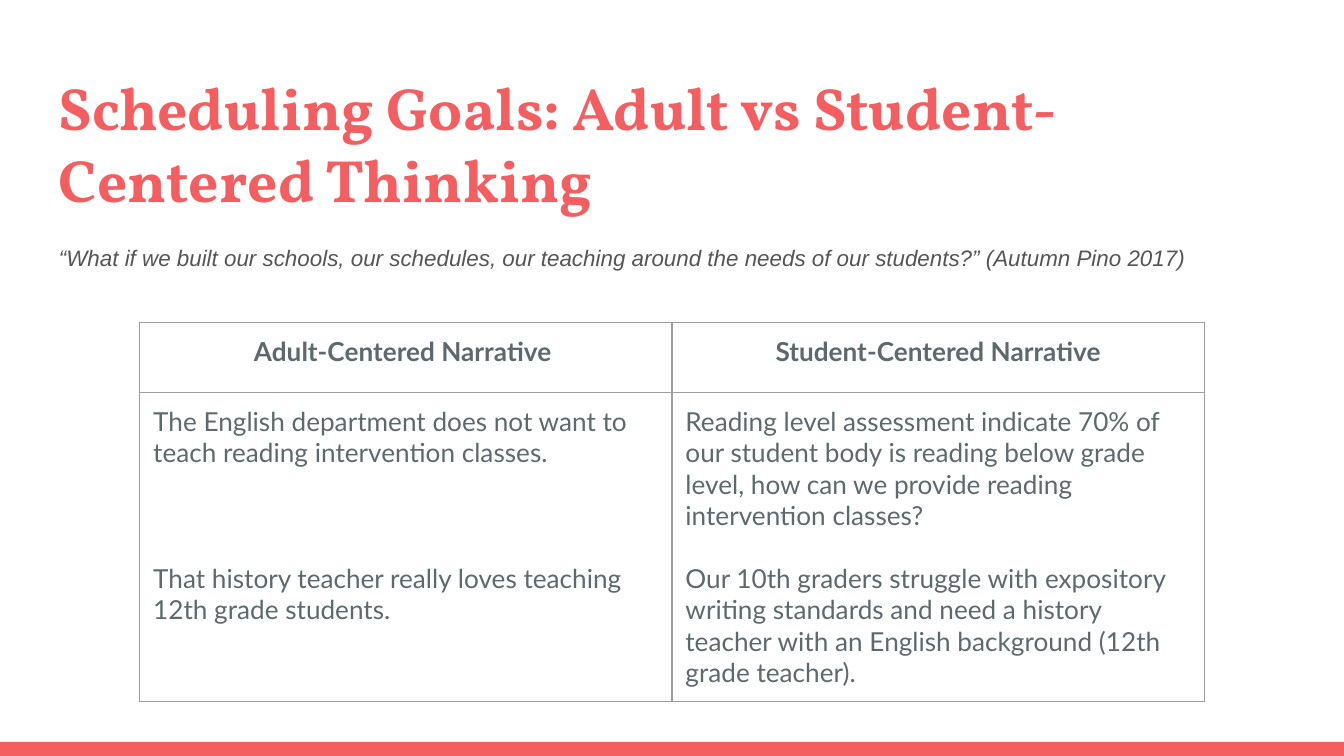
from dataclasses import dataclass

from lxml import etree
from pptx import Presentation
from pptx.dml.color import RGBColor
from pptx.enum import shapes, text
from pptx.oxml.ns import qn
from pptx.util import Inches, Pt

HEADERS = ["Adult-Centered Narrative ", "Student-Centered Narrative"]
# Each column: space in points before its second paragraph, then its paragraphs
NARRATIVES = [
    (50.4, ["The English department does not want to teach reading intervention classes.",
            "That history teacher really loves teaching 12th grade students."]),
    (16.8, ["Reading level assessment indicate 70% of our student body is reading "
            "below grade level, how can we provide reading intervention classes?",
            "Our 10th graders struggle with expository writing standards and need a "
            "history teacher with an English background (12th grade teacher)."]),
]


def rgb(value):
    return RGBColor.from_string(value)


@dataclass
class Deck:
    """Style of the deck and the slide being filled."""
    s: object
    accent: str = "F55E61"
    quote: str = "555555"
    body: str = "5E696C"
    border: str = "9E9E9E"
    inset: float = 0.1

    def font(self, p, name, size, color, bold=False, italic=False):
        f = p.font
        f.name, f.size, f.bold, f.italic = name, Pt(size), bold, italic
        f.color.rgb = rgb(color)

    def margins(self, box):
        box.margin_left = box.margin_right = Inches(self.inset)
        box.margin_top = box.margin_bottom = Inches(self.inset)

    def bar(self, x, y, w, h):
        sp = self.s.shapes.add_shape(shapes.MSO_SHAPE.RECTANGLE,
                                     Inches(x), Inches(y), Inches(w), Inches(h))
        sp.shadow.inherit = False
        sp.fill.solid()
        sp.fill.fore_color.rgb = rgb(self.accent)
        sp.line.fill.background()

    def textbox(self, x, y, w, h, words, spacing=1.0, **style):
        tf = self.s.shapes.add_textbox(Inches(x), Inches(y), Inches(w), Inches(h)).text_frame
        tf.word_wrap = True
        self.margins(tf)
        p = tf.paragraphs[0]
        p.text = words
        p.line_spacing = spacing
        self.font(p, **style)

    def borders(self, cell):
        """Draw all four sides; they must precede the fill in the XML."""
        tc_pr = cell._tc.get_or_add_tcPr()
        for i, side in enumerate(("a:lnL", "a:lnR", "a:lnT", "a:lnB")):
            ln = etree.Element(qn(side), w=str(Pt(0.75)))
            fill = etree.SubElement(ln, qn("a:solidFill"))
            etree.SubElement(fill, qn("a:srgbClr"), val=self.border)
            tc_pr.insert(i, ln)

    def cell(self, cell, paragraphs, gap=0, bold=False, align=text.PP_ALIGN.LEFT):
        cell.fill.background()
        self.margins(cell)
        self.borders(cell)
        tf = cell.text_frame
        for i, words in enumerate(paragraphs):
            p = tf.add_paragraph() if i else tf.paragraphs[0]
            p.text = words
            p.alignment = align
            p.space_before = Pt(gap if i else 0)
            self.font(p, "Lato", 14, self.body, bold)

    def table(self, x, y, col_width, row_heights, headers, columns):
        table = self.s.shapes.add_table(
            len(row_heights), len(headers), Inches(x), Inches(y),
            Inches(col_width * len(headers)), Inches(sum(row_heights))).table
        table.first_row = table.horz_banding = False
        for row, height in zip(table.rows, row_heights):
            row.height = Inches(height)
        for i, (header, (gap, paragraphs)) in enumerate(zip(headers, columns)):
            table.columns[i].width = Inches(col_width)
            self.cell(table.cell(0, i), [header], bold=True, align=text.PP_ALIGN.CENTER)
            self.cell(table.cell(1, i), paragraphs, gap)


def main():
    prs = Presentation()
    prs.slide_width = Inches(10)
    prs.slide_height = prs.slide_width * 9 // 16
    deck = Deck(prs.slides.add_slide(prs.slide_layouts[6]))

    deck.bar(0, 5.52, 10, 0.11)
    deck.textbox(0.34, 0.43, 9.32, 0.68, "Scheduling Goals: Adult vs Student-Centered Thinking",
                 name="Vollkorn", size=32, color=deck.accent, bold=True)
    deck.textbox(0.34, 1.69, 9.32, 3.31,
                 "“What if we built our schools, our schedules, our teaching around "
                 "the needs of our students?” (Autumn Pino 2017)",
                 spacing=1.15, name="Arial", size=12, color=deck.quote, italic=True)
    deck.table(1.04, 2.4, 3.96, [0.52, 2.3], HEADERS, NARRATIVES)

    prs.save("out.pptx")


if __name__ == "__main__":
    main()
